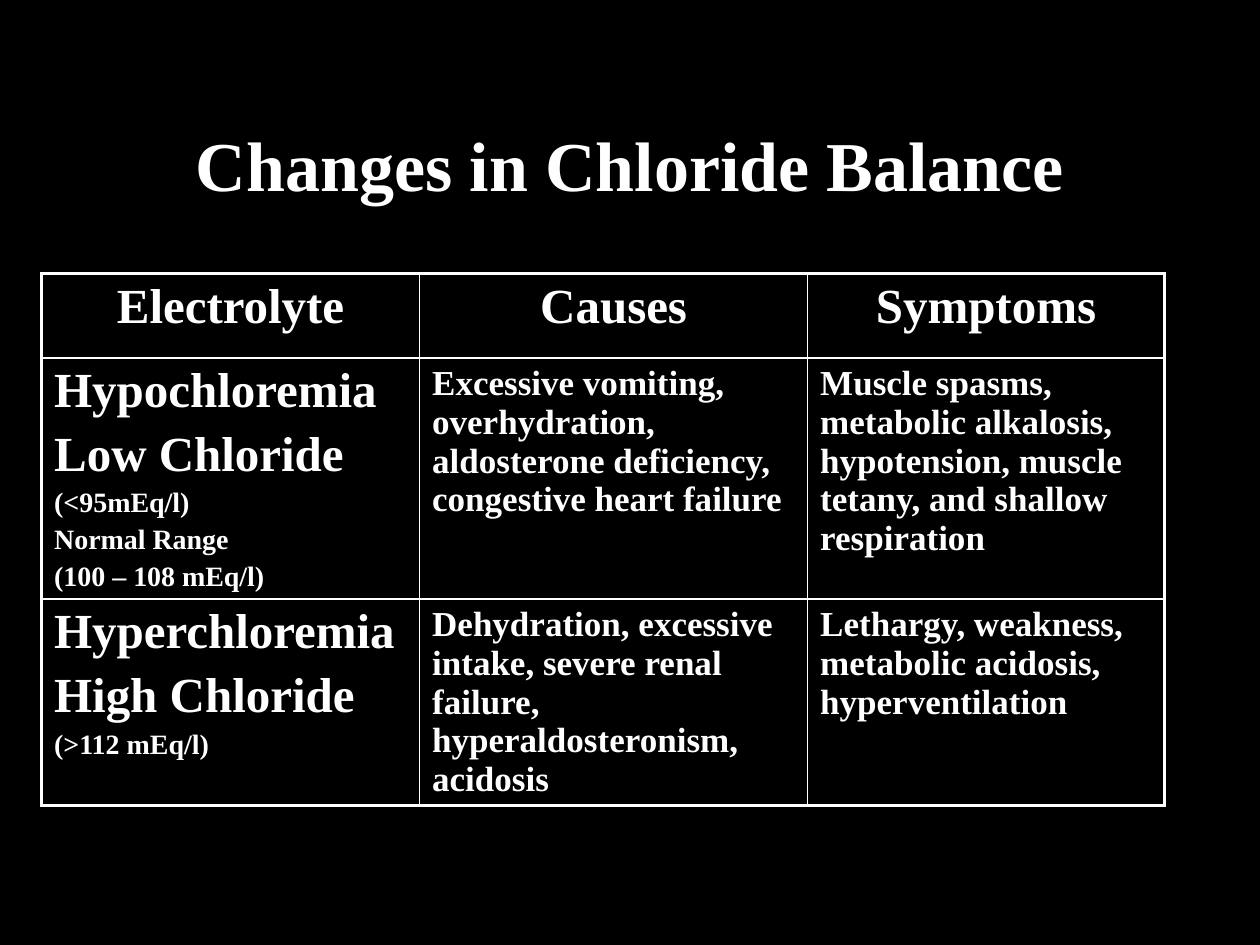
from lxml import etree
from pptx import Presentation
from pptx.dml.color import RGBColor
from pptx.enum.text import MSO_ANCHOR, PP_ALIGN
from pptx.oxml.ns import qn
from pptx.util import Inches, Pt

LEFT, CENTER = PP_ALIGN.LEFT, PP_ALIGN.CENTER
MIDDLE = MSO_ANCHOR.MIDDLE
COLORS = {"back": "000000", "text": "FFFFFF", "line": "FFFFFF"}
BIG, BODY, SMALL = 28, 20, 16
THICK, THIN = 2.25, 1

ROWS = [
    [[("Electrolyte", BIG)], [("Causes", BIG)], [("Symptoms", BIG)]],
    [
        [("Hypochloremia", BIG), ("Low Chloride", BIG), ("(<95mEq/l)", SMALL),
         ("Normal Range", SMALL), ("(100 – 108 mEq/l)", SMALL)],
        [("Excessive vomiting, overhydration, aldosterone deficiency, "
          "congestive heart failure", BODY)],
        [("Muscle spasms, metabolic alkalosis, hypotension, muscle tetany, "
          "and shallow respiration", BODY)],
    ],
    [
        [("Hyperchloremia", BIG), ("High Chloride", BIG), ("(>112 mEq/l)", SMALL)],
        [("Dehydration, excessive intake, severe renal failure, "
          "hyperaldosteronism, acidosis", BODY)],
        [("Lethargy, weakness, metabolic acidosis, hyperventilation", BODY)],
    ],
]


class Deck:
    font = "Times New Roman"

    def __init__(self, wide, high):
        self.deck = Presentation()
        self.deck.slide_width = Inches(wide)
        self.deck.slide_height = Inches(high)

    def color(self, name):
        return RGBColor.from_string(COLORS[name])

    def page(self):
        self.slide = self.deck.slides.add_slide(self.deck.slide_layouts[5])
        fill = self.slide.background.fill
        fill.solid()
        fill.fore_color.rgb = self.color("back")

    def label(self, para, text, size, align):
        para.alignment = align
        run = para.add_run()
        run.text = text
        style = {"name": self.font, "size": Pt(size), "bold": True}
        for key, value in style.items():
            setattr(run.font, key, value)
        run.font.color.rgb = self.color("text")

    def title(self, text, box):
        shape = self.slide.shapes.title
        for key, value in zip(("left", "top", "width", "height"), box):
            setattr(shape, key, Inches(value))
        shape.text_frame.vertical_anchor = MIDDLE
        self.label(shape.text_frame.paragraphs[0], text, 40, CENTER)

    def border(self, cell, widths):
        props = cell._tc.get_or_add_tcPr()
        for spot, (side, width) in enumerate(widths.items()):
            line = etree.Element(qn("a:" + side), w=str(Pt(width)))
            fill = etree.SubElement(line, qn("a:solidFill"))
            etree.SubElement(fill, qn("a:srgbClr"), val=COLORS["line"])
            props.insert(spot, line)

    def cell(self, cell, lines, align):
        cell.fill.background()
        frame = cell.text_frame
        for spot, (text, size) in enumerate(lines):
            para = frame.add_paragraph() if spot else frame.paragraphs[0]
            para.space_before = Pt(size * 0.2)
            self.label(para, text, size, align)

    def table(self, rows, left, top, widths, heights):
        frame = self.slide.shapes.add_table(
            len(rows), len(widths), Inches(left), Inches(top),
            Inches(sum(widths)), Inches(sum(heights)))
        table = frame.table
        table.horz_banding = False
        for col, width in zip(table.columns, widths):
            col.width = Inches(width)
        for row, height in zip(table.rows, heights):
            row.height = Inches(height)
        last_r, last_c = len(rows) - 1, len(widths) - 1
        for r, row in enumerate(rows):
            for c, lines in enumerate(row):
                cell = table.cell(r, c)
                self.cell(cell, lines, LEFT if r else CENTER)
                edges = {"lnL": c == 0, "lnR": c == last_c,
                         "lnT": r == 0, "lnB": r == last_r}
                self.border(cell, {side: THICK if edge else THIN
                                   for side, edge in edges.items()})


def main():
    show = Deck(10, 7.5)
    show.page()
    show.title("Changes in Chloride Balance", (0.75, 0.67, 8.5, 1.25))
    show.table(ROWS, 0.33, 2.17, (3, 3.08, 2.83), (0.67, 1.5, 1.5))
    show.deck.save("out.pptx")


if __name__ == "__main__":
    main()
